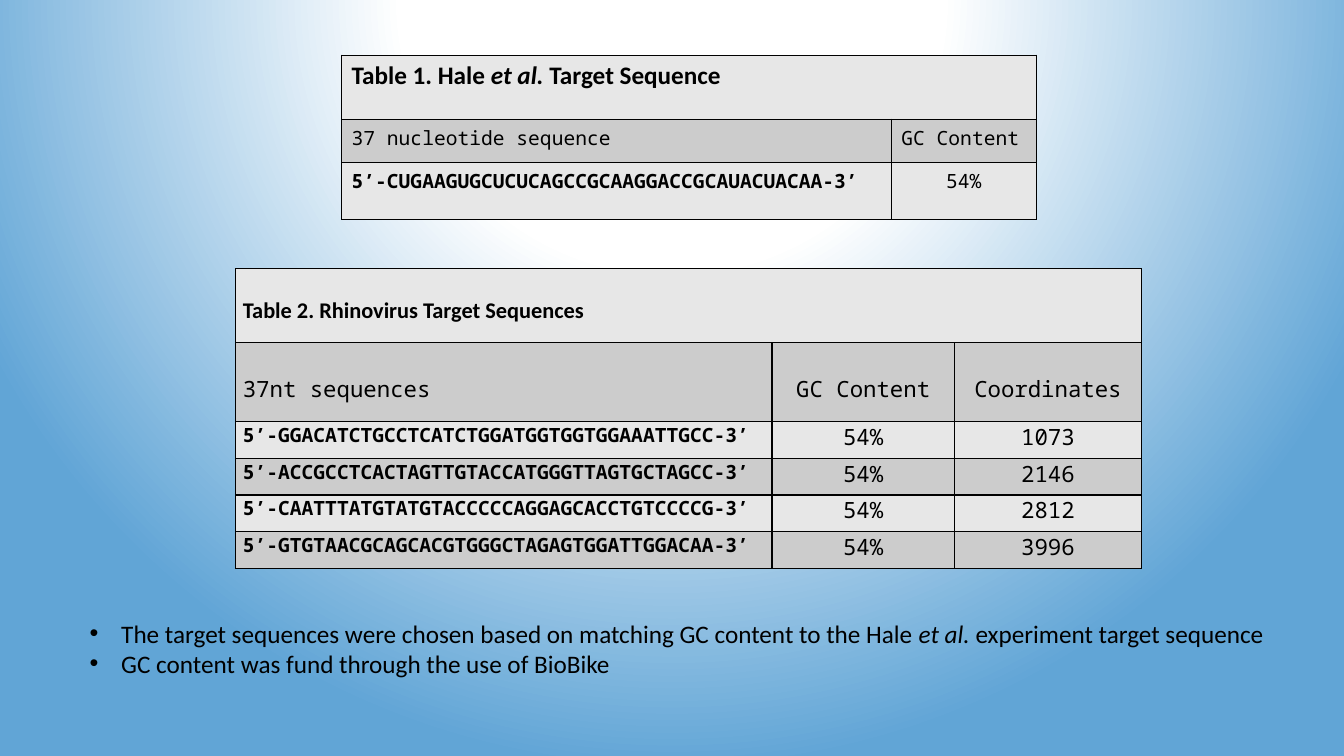
"""Build the slide of target sequence tables for GC content matching."""
from dataclasses import dataclass

from pptx import Presentation
from pptx.dml.color import RGBColor
from pptx.enum.text import PP_ALIGN as Align
from pptx.oxml import parse_xml
from pptx.oxml.ns import nsdecls
from pptx.util import Pt


@dataclass(frozen=True)
class Theme:
    """Colours, fonts and type sizes of the slide."""
    ink: str = "000000"
    light: str = "E7E7E7"
    dark: str = "CCCCCC"
    glow: str = "FFFFFF"
    sky: str = "61A5D6"
    sans: str = "Calibri"
    mono: str = "Noto Sans Mono"
    large: int = 18
    medium: int = 16
    small: int = 14


THEME = Theme()
ITALIC = "et al."


@dataclass(frozen=True)
class Style:
    """Font and alignment of a paragraph."""
    font: str
    size: int
    bold: bool = False
    align: Align = Align.LEFT


@dataclass(frozen=True)
class Row:
    """A table row with one style per column."""
    height: float
    texts: tuple[str, ...]
    styles: tuple[Style, ...]
    top: float


@dataclass(frozen=True)
class SequenceTable:
    """A bordered table whose first row is a merged title."""
    left: float
    top: float
    widths: tuple[float, ...]
    side: float
    rows: tuple[Row, ...]


BODY = Style(THEME.sans, THEME.large)
TITLE_LARGE = Style(THEME.sans, THEME.large, True)
TITLE_MEDIUM = Style(THEME.sans, THEME.medium, True)
SEQUENCE = Style(THEME.mono, THEME.small, True)
LABEL_SMALL = Style(THEME.mono, THEME.small)
VALUE_SMALL = Style(THEME.mono, THEME.small, align=Align.CENTER)
LABEL = Style(THEME.mono, THEME.medium)
VALUE = Style(THEME.mono, THEME.medium, align=Align.CENTER)

RHINOVIRUS_TARGETS = (
    ("5’-GGACATCTGCCTCATCTGGATGGTGGTGGAAATTGCC-3’", "54%", "1073"),
    ("5’-ACCGCCTCACTAGTTGTACCATGGGTTAGTGCTAGCC-3’", "54%", "2146"),
    ("5’-CAATTTATGTATGTACCCCCAGGAGCACCTGTCCCCG-3’", "54%", "2812"),
    ("5’-GTGTAACGCAGCACGTGGGCTAGAGTGGATTGGACAA-3’", "54%", "3996"),
)
TABLES = (
    SequenceTable(168.3, 192, (383.2, 130.2, 133.8), 5.2, (
        Row(52.8, ("Table 2. Rhinovirus Target Sequences",), (TITLE_MEDIUM,), 20),
        Row(56.4, ("37nt sequences", "GC Content", "Coordinates"),
            (LABEL, VALUE, VALUE), 21.8),
        *(Row(26.2, texts, (SEQUENCE, VALUE, VALUE), 0)
          for texts in RHINOVIRUS_TARGETS),
    )),
    SequenceTable(244, 39.5, (392.7, 103.5), 7.2, (
        Row(45.6, ("Table 1. Hale et al. Target Sequence",), (TITLE_LARGE,), 3.6),
        Row(30.8, ("37 nucleotide sequence", "GC Content"),
            (LABEL_SMALL, LABEL_SMALL), 3.6),
        Row(40.8, ("5’-CUGAAGUGCUCUCAGCCGCAAGGACCGCAUACUACAA-3’", "54%"),
            (SEQUENCE, VALUE_SMALL), 3.6),
    )),
)
FINDINGS = (
    "The target sequences were chosen based on matching GC content to the Hale "
    "et al. experiment target sequence",
    "GC content was fund through the use of BioBike",
)


def write_paragraph(paragraph, text: str, style: Style) -> None:
    """Fill a paragraph, setting the citation phrase in italics."""
    for part in filter(None, text.partition(ITALIC)):
        run = paragraph.add_run()
        run.text = part
        if part == ITALIC:
            run.font.italic = True
    paragraph.alignment = style.align
    font = paragraph.font
    font.name, font.size, font.bold = style.font, Pt(style.size), style.bold
    font.color.rgb = RGBColor.from_string(THEME.ink)


def add_borders(cell) -> None:
    """Draw a thin line on all four sides of a cell."""
    properties = cell._tc.get_or_add_tcPr()
    for index, side in enumerate("LRTB"):
        properties.insert(index, parse_xml(
            f'<a:ln{side} {nsdecls("a")} w="{Pt(1)}"><a:solidFill>'
            f'<a:srgbClr val="{THEME.ink}"/></a:solidFill></a:ln{side}>'))


def add_sequence_table(slide, content: SequenceTable) -> None:
    """Add a table with alternating row fills."""
    table = slide.shapes.add_table(
        len(content.rows), len(content.widths), Pt(content.left), Pt(content.top),
        Pt(sum(content.widths)), Pt(sum(row.height for row in content.rows))).table
    table.first_row = table.horz_banding = False
    for column, width in zip(table.columns, content.widths):
        column.width = Pt(width)
    for index, row in enumerate(content.rows):
        table.rows[index].height = Pt(row.height)
        for cell in table.rows[index].cells:
            cell.margin_left = cell.margin_right = Pt(content.side)
            cell.margin_top, cell.margin_bottom = Pt(row.top), Pt(0)
            cell.fill.solid()
            cell.fill.fore_color.rgb = RGBColor.from_string(
                THEME.dark if index % 2 else THEME.light)
            add_borders(cell)
        for cell, text, style in zip(table.rows[index].cells, row.texts, row.styles):
            write_paragraph(cell.text_frame.paragraphs[0], text, style)
    table.cell(0, 0).merge(table.cell(0, len(content.widths) - 1))


def add_findings(slide) -> None:
    """Add the bulleted findings below the tables."""
    frame = slide.shapes.add_textbox(Pt(57), Pt(437.8), Pt(870.5), Pt(51)).text_frame
    frame.word_wrap = True
    for index, text in enumerate(FINDINGS):
        paragraph = frame.add_paragraph() if index else frame.paragraphs[0]
        properties = paragraph._p.get_or_add_pPr()
        properties.set("marL", str(Pt(22.5)))
        properties.set("indent", str(Pt(-22.5)))
        properties.append(parse_xml(f'<a:buFont {nsdecls("a")} typeface="Arial"/>'))
        properties.append(parse_xml(f'<a:buChar {nsdecls("a")} char="•"/>'))
        write_paragraph(paragraph, text, BODY)


def set_background(slide) -> None:
    """Give the slide a circular glow centred above its top edge."""
    stops = "".join(
        f'<a:gs pos="{position * 1000}"><a:srgbClr val="{color}"/></a:gs>'
        for position, color in ((0, THEME.glow), (35, THEME.glow), (100, THEME.sky)))
    slide.element.cSld.insert(0, parse_xml(
        f'<p:bg {nsdecls("p", "a")}><p:bgPr><a:gradFill rotWithShape="1">'
        f'<a:gsLst>{stops}</a:gsLst><a:path path="circle">'
        '<a:fillToRect l="50000" t="-80000" r="50000" b="180000"/></a:path>'
        '</a:gradFill><a:effectLst/></p:bgPr></p:bg>'))


def main() -> None:
    """Build and save the presentation."""
    presentation = Presentation()
    presentation.slide_width, presentation.slide_height = Pt(960), Pt(540)
    slide = presentation.slides.add_slide(presentation.slide_layouts[6])
    set_background(slide)
    add_findings(slide)
    for content in TABLES:
        add_sequence_table(slide, content)
    presentation.save("out.pptx")


if __name__ == "__main__":
    main()
